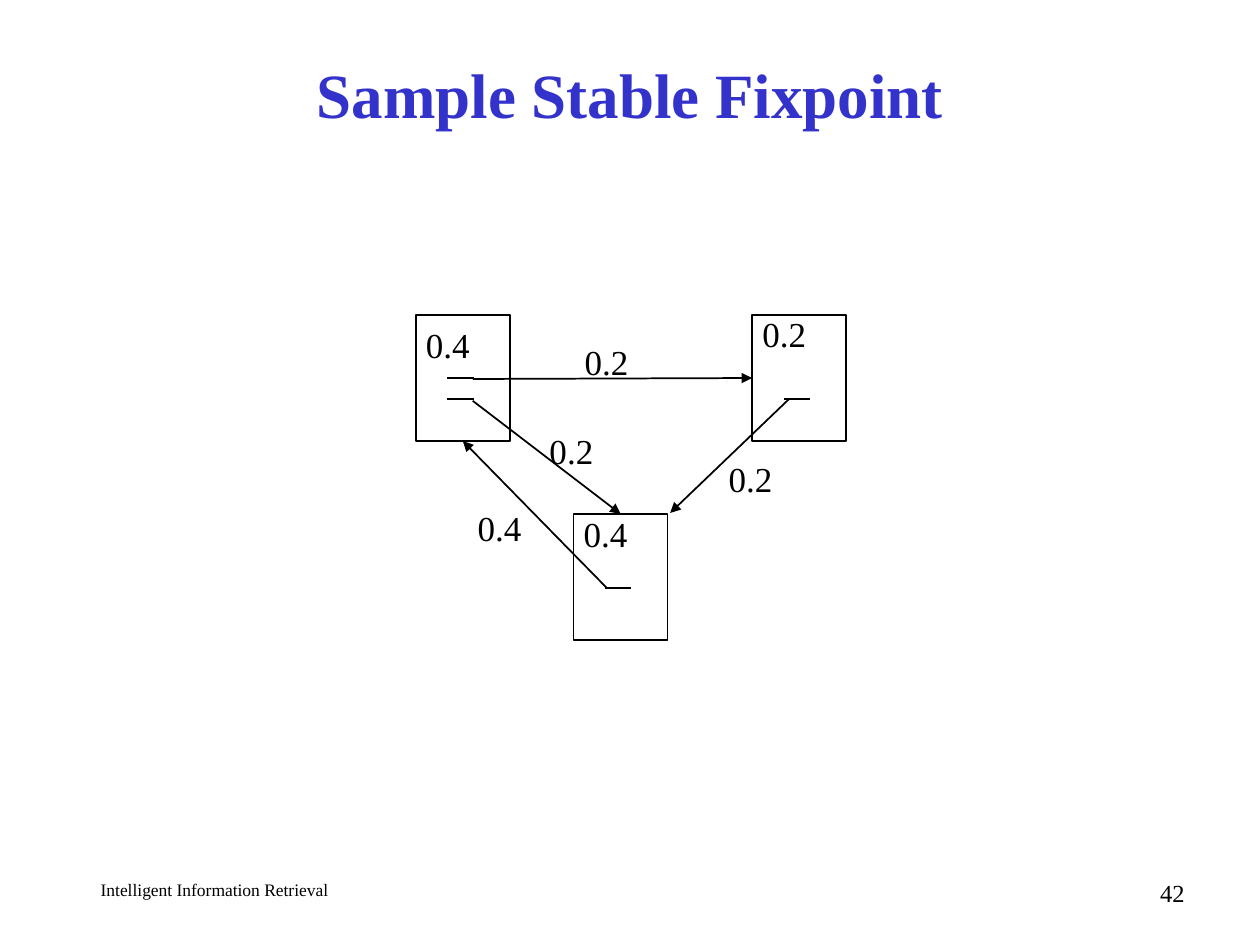
from lxml import etree
from pptx import Presentation
from pptx.dml.color import RGBColor
from pptx.enum.shapes import MSO_CONNECTOR, MSO_SHAPE
from pptx.enum.text import MSO_ANCHOR, PP_ALIGN
from pptx.oxml.ns import qn
from pptx.util import Cm, Pt

STRAIGHT = MSO_CONNECTOR.STRAIGHT
RECT = MSO_SHAPE.RECTANGLE
MIDDLE = MSO_ANCHOR.MIDDLE
LEFT, CENTER, RIGHT = PP_ALIGN.LEFT, PP_ALIGN.CENTER, PP_ALIGN.RIGHT
TOP_SIDE, LEFT_SIDE, BOTTOM_SIDE = 0, 1, 2


def color(value):
    return RGBColor.from_string(value)


class Diagram:
    font = "Times New Roman"
    ink = "000000"
    accent = "3333CC"
    line_width = Pt(1)
    node_size = (1.9, 2.54)
    label_size = (1.4, 1.09)
    stub_length = 0.53

    def __init__(self, slide):
        self.s = slide

    def fill_text(self, tf, text, size, align, hue=None, bold=False):
        p = tf.paragraphs[0]
        p.alignment = align
        r = p.add_run()
        r.text = text
        for name, value in {"name": self.font, "size": Pt(size), "bold": bold}.items():
            setattr(r.font, name, value)
        r.font.color.rgb = color(hue or self.ink)

    def title(self, text, *box):
        sp = self.s.shapes.title
        for name, value in zip(("left", "top", "width", "height"), box):
            setattr(sp, name, Cm(value))
        sp.text_frame.vertical_anchor = MIDDLE
        self.fill_text(sp.text_frame, text, 36, CENTER, self.accent, True)

    def text(self, text, box, size, align, wrap=True):
        sp = self.s.shapes.add_textbox(*map(Cm, box))
        sp.text_frame.word_wrap = wrap
        self.fill_text(sp.text_frame, text, size, align)

    def label(self, text, x, y):
        self.text(text, (x, y, *self.label_size), 20, CENTER, False)

    def stroke(self, line):
        line.color.rgb = color(self.ink)
        line.width = self.line_width

    def node(self, x, y):
        sp = self.s.shapes.add_shape(RECT, *map(Cm, (x, y, *self.node_size)))
        sp.shadow.inherit = False
        sp.fill.background()
        self.stroke(sp.line)
        return sp

    def line(self, x1, y1, x2, y2):
        cxn = self.s.shapes.add_connector(STRAIGHT, *map(Cm, (x1, y1, x2, y2)))
        self.stroke(cxn.line)
        etree.SubElement(cxn._element.spPr, qn("a:effectLst"))
        return cxn

    def stub(self, x, y):
        self.line(x, y, x + self.stub_length, y)

    def arrow(self, start, end, node=None, side=None):
        cxn = self.line(*start, *end)
        if node is not None:
            cxn.end_connect(node, side)
        ln = cxn._element.spPr.find(qn("a:ln"))
        etree.SubElement(ln, qn("a:tailEnd"), type="triangle")


def main():
    prs = Presentation()
    prs.slide_width, prs.slide_height = Cm(25.4), Cm(19.05)
    d = Diagram(prs.slides.add_slide(prs.slide_layouts[5]))

    # Footer and title
    d.text("Intelligent Information Retrieval", (1.78, 17.6, 9.53, 0.64), 10, LEFT)
    d.text("42", (18.85, 17.58, 5.28, 0.64), 14, RIGHT)
    d.title("Sample Stable Fixpoint", 1.9, 0.84, 21.6, 2.1)

    # Pages of the graph
    first = d.node(8.38, 6.35)
    bottom = d.node(11.56, 10.36)
    second = d.node(15.16, 6.35)

    # Hyperlinks inside the pages
    for x, y in ((9.02, 7.62), (9.02, 8.05), (15.8, 8.05), (12.19, 11.86)):
        d.stub(x, y)

    # Links between pages
    d.arrow((9.53, 7.64), (15.16, 7.62), second, LEFT_SIDE)
    d.arrow((9.53, 8.08), (12.51, 10.36), bottom, TOP_SIDE)
    d.arrow((12.22, 11.84), (9.33, 8.89), first, BOTTOM_SIDE)
    d.arrow((15.9, 8.05), (13.51, 10.34))

    # Page ranks, then link flows
    for text, x, y in (
        ("0.4", 8.33, 6.4), ("0.4", 11.51, 10.21), ("0.2", 15.11, 6.17),
        ("0.2", 14.43, 9.09), ("0.2", 11.53, 6.73), ("0.2", 10.82, 8.53),
        ("0.4", 9.37, 10.08),
    ):
        d.label(text, x, y)

    prs.save("out.pptx")


if __name__ == "__main__":
    main()
